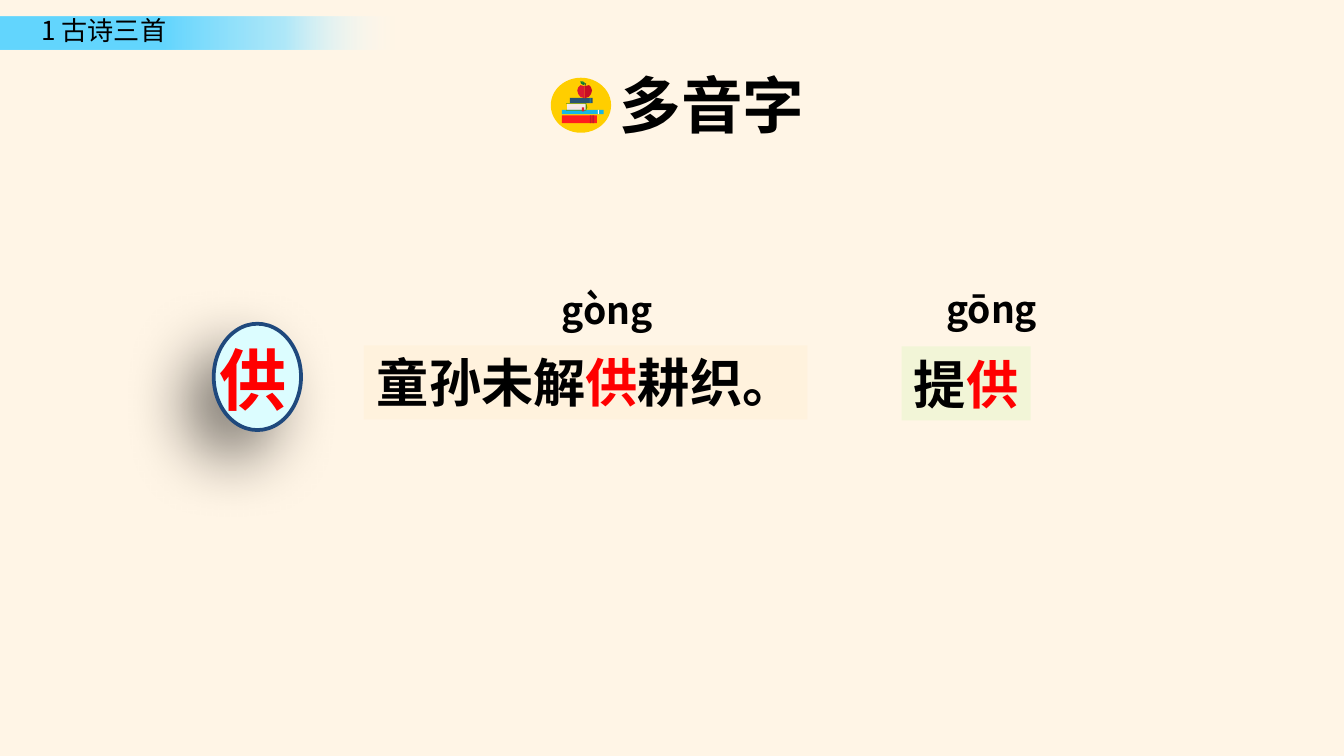
"""Build a Chinese lesson slide about the two readings of 供."""
from lxml import etree
from pptx import Presentation
from pptx import util as u
from pptx.dml.color import RGBColor
from pptx.enum import shapes, text
from pptx.oxml import ns, parse_xml

BLACK = RGBColor(0x00, 0x00, 0x00)
RED = RGBColor(0xFF, 0x00, 0x00)
WHITE = RGBColor(0xFF, 0xFF, 0xFF)
PAPER = RGBColor(0xFF, 0xF5, 0xE6)
CREAM = RGBColor(0xFF, 0xF2, 0xDD)
LIME = RGBColor(0xF2, 0xF5, 0xD7)
ICE = RGBColor(0xDC, 0xFD, 0xFF)
OUTLINE = RGBColor(0x1F, 0x49, 0x7D)
YELLOW = RGBColor(0xFF, 0xCE, 0x00)
STEM = RGBColor(0x4F, 0x2E, 0x2E)
APPLE_DARK = RGBColor(0xC9, 0x0D, 0x23)
APPLE_LIGHT = RGBColor(0xDB, 0x19, 0x30)
LEAF_LIGHT = RGBColor(0x12, 0x87, 0x3C)
LEAF_DARK = RGBColor(0x0E, 0x77, 0x31)
BOOK_RED = RGBColor(0xFF, 0x1D, 0x1D)
STRIPE = RGBColor(0xBE, 0x1E, 0x2D)
PAGES = RGBColor(0xF9, 0xEE, 0xEC)
PAGE_LINE = RGBColor(0xF3, 0xDE, 0xDA)
SKY = RGBColor(0x14, 0xB6, 0xE7)
NAVY = RGBColor(0x2B, 0x53, 0x72)
GREEN = RGBColor(0x5D, 0x93, 0x00)
BOOKMARK = RGBColor(0xDB, 0x22, 0x32)
CHINESE = "Noto Sans CJK SC"
PINYIN = "Noto Sans CJK JP"
DRAWING = 'xmlns:a="http://schemas.openxmlformats.org/drawingml/2006/main"'


def paint(shape, color):
    shape.shadow.inherit = False
    shape.fill.solid()
    shape.fill.fore_color.rgb = color
    shape.line.fill.background()
    return shape


def write(shape, words, size, font=CHINESE, bold=True, align=text.PP_ALIGN.LEFT, inset=(0.18, 0.1)):
    frame = shape.text_frame
    frame.word_wrap = True
    frame.vertical_anchor = text.MSO_ANCHOR.TOP
    frame.margin_left = frame.margin_right = u.Cm(inset[0])
    frame.margin_top = frame.margin_bottom = u.Cm(inset[1])
    para = frame.paragraphs[0]
    para.alignment = align
    para.font.size = u.Pt(size)
    para.font.bold = bold
    para.font.name = font
    defaults = para._p.pPr.find(ns.qn("a:defRPr"))
    etree.SubElement(defaults, ns.qn("a:ea"), typeface=font)
    for part, color in words:
        span = para.add_run()
        span.text = part
        span.font.color.rgb = color
    return frame


deck = Presentation()
deck.slide_width = u.Cm(25.4)
deck.slide_height = u.Cm(14.29)
page = deck.slides.add_slide(deck.slide_layouts[5])
page.background.fill.solid()
page.background.fill.fore_color.rgb = PAPER
RECT = shapes.MSO_SHAPE.RECTANGLE
OVAL = shapes.MSO_SHAPE.OVAL

band = page.shapes.add_shape(RECT, u.Cm(0), u.Cm(0.32), u.Cm(7.7), u.Cm(0.62))
paint(band, WHITE)
solid = band._element.spPr.find(ns.qn("a:solidFill"))
solid.getparent().replace(solid, parse_xml(
    f'<a:gradFill {DRAWING} rotWithShape="1"><a:gsLst>'
    '<a:gs pos="40000"><a:srgbClr val="63D6FF"/></a:gs>'
    '<a:gs pos="70000"><a:srgbClr val="97E4FF"><a:alpha val="76000"/></a:srgbClr></a:gs>'
    '<a:gs pos="97000"><a:srgbClr val="FFFFFF"><a:alpha val="0"/></a:srgbClr></a:gs>'
    '</a:gsLst><a:lin ang="0" scaled="0"/></a:gradFill>'))

lesson = page.shapes.add_textbox(u.Cm(0.53), u.Cm(0.15), u.Cm(3), u.Cm(0.86))
write(lesson, [("1 古诗三首", BLACK)], 14, bold=False, inset=(0.25, 0.13)).word_wrap = False

icon = page.shapes.add_group_shape()
disc = icon.shapes.add_shape(OVAL, u.Cm(10.41), u.Cm(1.47), u.Cm(1.14), u.Cm(1.04))
paint(disc, YELLOW)

apple_half = [(0, 1.63), (0.08, 1.61), (0.12, 1.65), (0.14, 1.71), (0.12, 1.78), (0.08, 1.83), (0, 1.86)]
outlines = [
    ([(11.05, 1.63), (11.07, 1.57), (11.08, 1.58), (11.06, 1.63)], STEM),
    ([(11.05 + x, y) for x, y in apple_half], APPLE_DARK),
    ([(11.05 - x, y) for x, y in apple_half], APPLE_LIGHT),
    ([(10.97, 1.54), (11.02, 1.54), (11.07, 1.58), (11.02, 1.57)], LEAF_LIGHT),
    ([(10.97, 1.54), (11.02, 1.57), (11.07, 1.58), (11.03, 1.61), (10.98, 1.58)], LEAF_DARK),
    ([(10.7, 1.95), (11.08, 1.95), (11.1, 2.03), (11.08, 2.09), (10.7, 2.09),
      (10.7, 2.08), (11.07, 2.08), (11.07, 1.96), (10.7, 1.96)], GREEN),
    ([(11, 2.03), (11, 2.11), (11.02, 2.1), (11.04, 2.11), (11.04, 2.03)], BOOKMARK),
]
bars = [(10.62, 2.18, 0.66, 0.15, BOOK_RED)]
bars += [(x, 2.18, 0.02, 0.15, STRIPE) for x in (11.15, 11.18, 11.21)]
bars += [(10.72, 1.96, 0.36, 0.13, PAGES)]
bars += [(10.72, 1.98 + 0.02 * row, 0.36, 0.01, PAGE_LINE) for row in range(5)]
bars += [
    (10.62, 2.08, 0.79, 0.08, SKY),
    (11.3, 2.08, 0.02, 0.08, WHITE),
    (10.77, 1.85, 0.43, 0.1, NAVY),
    (11.15, 1.85, 0.01, 0.1, SKY),
]
for left, top, width, height, color in bars:
    paint(icon.shapes.add_shape(RECT, u.Cm(left), u.Cm(top), u.Cm(width), u.Cm(height)), color)
for points, color in outlines:
    corners = [(u.Cm(x), u.Cm(y)) for x, y in points]
    builder = icon.shapes.build_freeform(*corners[0])
    builder.add_line_segments(corners[1:], close=True)
    paint(builder.convert_to_shape(), color)

title = page.shapes.title
title.left, title.top, title.width, title.height = u.Cm(11.56), u.Cm(1.19), u.Cm(4.34), u.Cm(1.55)
write(title, [("多音字", BLACK)], 33, inset=(0.15, 0.08)).auto_size = text.MSO_AUTO_SIZE.NONE

badge = page.shapes.add_group_shape()
oval = badge.shapes.add_shape(OVAL, u.Cm(4.04), u.Cm(6.12), u.Cm(1.65), u.Cm(2.01))
paint(oval, ICE)
oval.line.color.rgb = OUTLINE
oval.line.width = u.Pt(2)
effects = oval._element.spPr.find(ns.qn("a:effectLst"))
effects.append(parse_xml(
    f'<a:outerShdw {DRAWING} blurRad="{u.Pt(35)}" dist="{u.Pt(20)}" dir="8100000" rotWithShape="0">'
    '<a:srgbClr val="000000"><a:alpha val="50000"/></a:srgbClr></a:outerShdw>'))
character = badge.shapes.add_textbox(u.Cm(3.96), u.Cm(6.3), u.Cm(1.5), u.Cm(1.47))
write(character, [("供", RED)], 36)

examples = [
    (6.88, 6.53, 8.38, CREAM, [("童孙未解", BLACK), ("供", RED), ("耕织。", BLACK)]),
    (17.04, 6.55, 2.44, LIME, [("提", BLACK), ("供", RED)]),
]
for left, top, width, color, words in examples:
    example = page.shapes.add_shape(RECT, u.Cm(left), u.Cm(top), u.Cm(width), u.Cm(1.4))
    write(paint(example, color), words, 28, align=text.PP_ALIGN.CENTER)

for left, top, width, reading in [(17.7, 5.31, 2.72, "gōng"), (10.44, 5.33, 2.9, "gòng")]:
    box = page.shapes.add_textbox(u.Cm(left), u.Cm(top), u.Cm(width), u.Cm(1.04))
    write(box, [(reading, BLACK)], 20, font=PINYIN)

deck.save("out.pptx")
